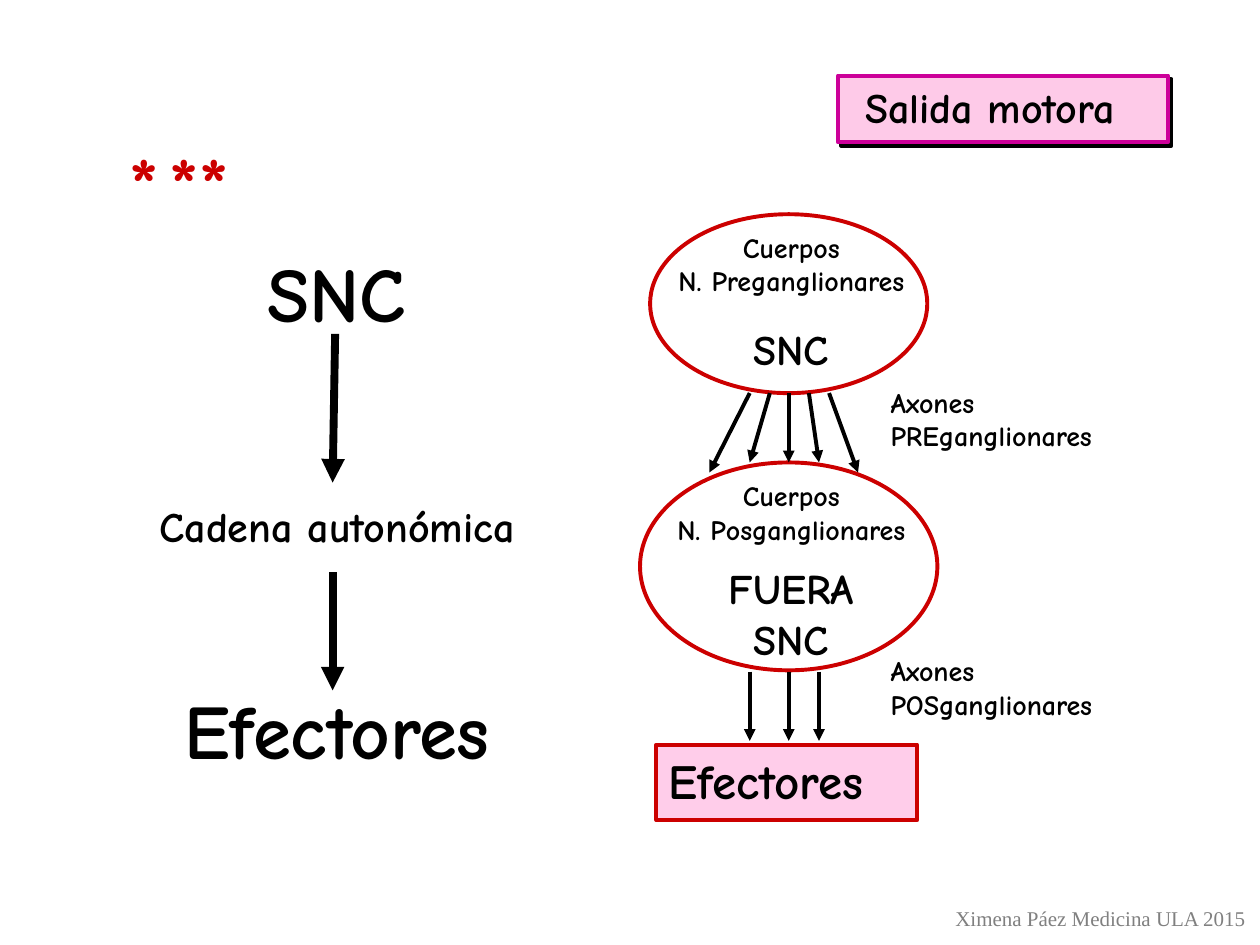
from pptx import Presentation
from pptx.dml.color import RGBColor
from pptx.enum.shapes import MSO_CONNECTOR as CONN, MSO_SHAPE as SHAPE
from pptx.enum.text import MSO_ANCHOR as ANCHOR, MSO_AUTO_SIZE as FIT, PP_ALIGN as ALIGN
from pptx.oxml import parse_xml
from pptx.oxml.ns import nsdecls
from pptx.util import Inches, Pt

BLACK = RGBColor(0x00, 0x00, 0x00)
RED = RGBColor(0xCC, 0x00, 0x00)
MAGENTA = RGBColor(0xCC, 0x00, 0x99)
LIGHT_PINK = RGBColor(0xFE, 0xCA, 0xE8)
PINK = RGBColor(0xFF, 0xCD, 0xEA)
GRAY = RGBColor(0x80, 0x80, 0x80)
COMIC = "Comic Neue"


def effects(shadow=False):
    """Return an effect list, empty or holding a hard black shadow."""
    inner = ('<a:outerShdw dist="35921" dir="2700000" algn="ctr" rotWithShape="0">'
             '<a:srgbClr val="000000"/></a:outerShdw>') if shadow else ""
    return parse_xml(f'<a:effectLst {nsdecls("a")}>{inner}</a:effectLst>')


def write(sp, lines, align=ALIGN.LEFT, color=BLACK, font=COMIC, bold=True, shadow=False):
    """Fill a shape with lines of (text, size, space before)."""
    tf = sp.text_frame
    tf.word_wrap = False
    tf.auto_size = FIT.SHAPE_TO_FIT_TEXT
    tf.vertical_anchor = ANCHOR.TOP
    for i, (text, size, before) in enumerate(lines):
        p = tf.paragraphs[0] if i == 0 else tf.add_paragraph()
        p.alignment = align
        p.space_before = Pt(before)
        r = p.add_run()
        r.text = text
        r.font.size = Pt(size)
        r.font.bold = bold
        r.font.color.rgb = color
        if shadow:
            r.font.fill._xPr.append(effects(True))
        r.font.name = font


def add_text(s, box, lines, **style):
    """Add a text box."""
    write(s.shapes.add_textbox(*map(Inches, box)), lines, **style)


def add_outline(s, kind, box, line, fill=None):
    """Add a preset shape with a coloured outline."""
    sp = s.shapes.add_shape(kind, *map(Inches, box))
    sp.shadow.inherit = False
    sp.line.color.rgb = line
    sp.line.width = Pt(2.25)
    if fill is None:
        sp.fill.background()
    else:
        sp.fill.solid()
        sp.fill.fore_color.rgb = fill
    return sp


def add_label(s, box, text, size, line, fill, shadow=False):
    """Add a filled rectangle with one line of text."""
    sp = add_outline(s, SHAPE.RECTANGLE, box, line, fill)
    if shadow:
        pr = sp._element.spPr
        pr.replace(pr.find("{*}effectLst"), effects(True))
    write(sp, [(text, size, 0)])


def add_arrow(s, x1, y1, x2, y2, width=2.25):
    """Add a black arrow."""
    c = s.shapes.add_connector(CONN.STRAIGHT, *map(Inches, (x1, y1, x2, y2)))
    c.line.color.rgb = BLACK
    c.line.width = Pt(width)
    c.line._get_or_add_ln().append(parse_xml(f'<a:tailEnd {nsdecls("a")} type="triangle"/>'))
    c._element.spPr.append(effects())


def main():
    """Build the slide."""
    prs = Presentation()
    prs.slide_width, prs.slide_height = Inches(10), Inches(7.5)
    s = prs.slides.add_slide(prs.slide_layouts[6])

    add_label(s, (6.65, 0.6, 2.62, 0.53), " Salida motora", 24, MAGENTA, LIGHT_PINK, shadow=True)
    for box, stars in (((0.93, 1.03, 0.52, 0.83), "*"), ((1.25, 1.03, 0.85, 1.58), "**")):
        add_text(s, box, [(stars, 44, 0)], color=RED, shadow=True)

    add_text(s, (1.06, 1.9, 3.23, 4.28),
             [("SNC", 44, 0), ("Cadena autonómica", 24, 93), ("Efectores", 44, 75)],
             align=ALIGN.CENTER)

    add_outline(s, SHAPE.OVAL, (5.16, 1.7, 2.2, 1.42), RED)
    add_outline(s, SHAPE.OVAL, (5.08, 3.67, 2.36, 1.65), RED)
    add_text(s, (5.17, 1.78, 2.22, 1.23),
             [("Cuerpos", 16, 0), ("N. Preganglionares", 16, 0), ("SNC", 24, 14.5)],
             align=ALIGN.CENTER)
    add_text(s, (5.12, 3.75, 2.32, 1.57),
             [("Cuerpos", 16, 0), ("N. Posganglionares", 16, 0), ("FUERA", 24, 9.7),
              ("SNC", 24, 0)],
             align=ALIGN.CENTER)
    add_label(s, (5.21, 5.91, 2.07, 0.6), "Efectores", 28, RED, PINK)

    for x1, x2, y2 in ((6.26, 6.26, 3.67), (6.11, 5.95, 3.67), (6.42, 6.5, 3.67),
                       (5.95, 5.63, 3.75), (6.58, 6.81, 3.75)):
        add_arrow(s, x1, 3.12, x2, y2)
    for x in (6.26, 5.95, 6.5):
        add_arrow(s, x, 5.33, x, 5.88)
    add_arrow(s, 2.66, 2.65, 2.64, 3.83, 4.5)
    add_arrow(s, 2.64, 4.54, 2.64, 5.48, 4.5)

    for top, width, name in ((5.14, 1.96, "POSganglionares"), (3.01, 1.9, "PREganglionares")):
        add_text(s, (6.97, top, width, 0.64), [("Axones", 16, 0), (name, 16, 0)])
    add_text(s, (7.47, 7.14, 2.53, 0.3), [("Ximena Páez Medicina ULA 2015", 12, 0)],
             align=ALIGN.CENTER, color=GRAY, font="Times New Roman", bold=False)

    prs.save("out.pptx")


if __name__ == "__main__":
    main()
